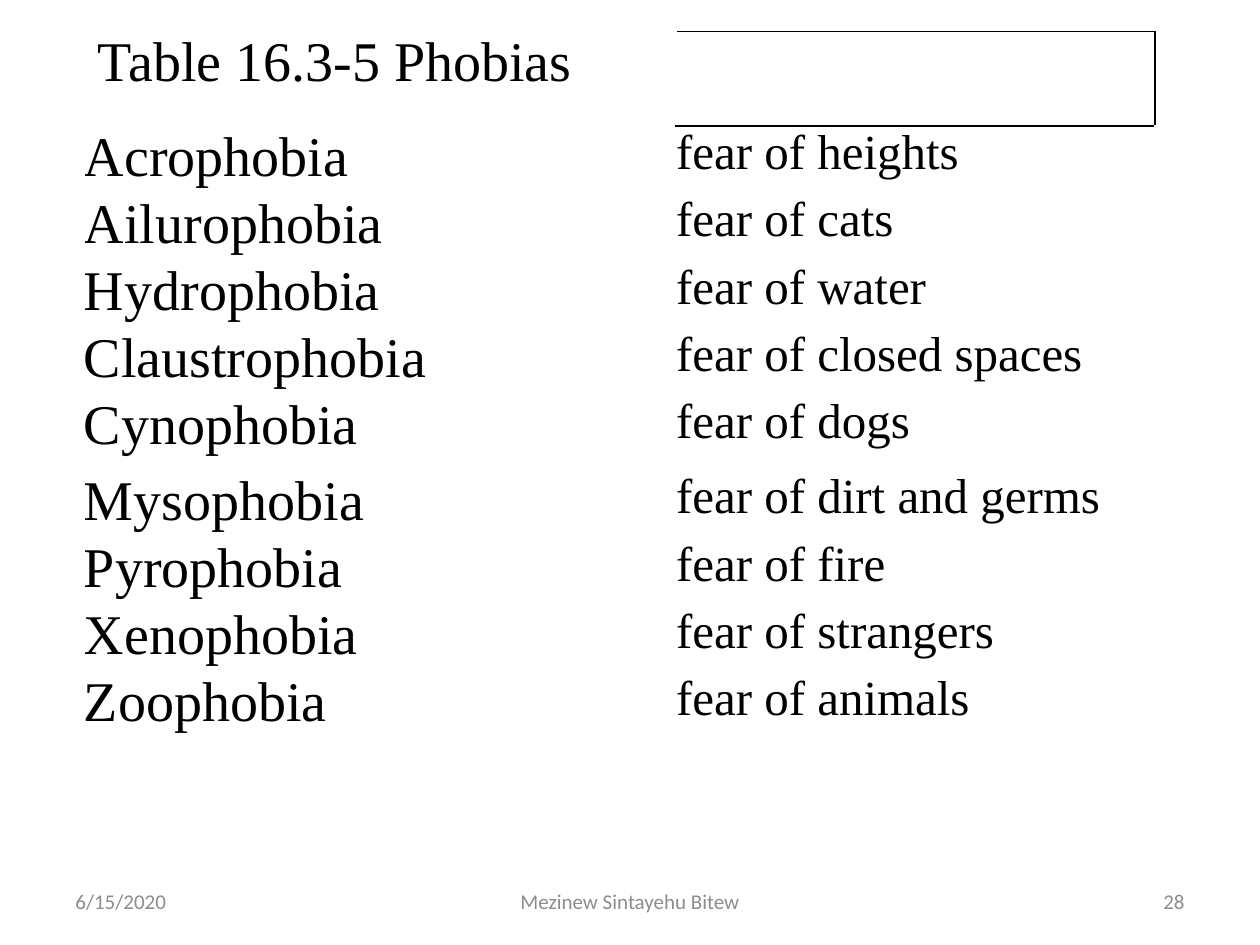
"""Build a slide with a table of phobias and a footer line."""
from typing import NamedTuple

from lxml.etree import SubElement
from pptx import Presentation as Deck
from pptx.dml.color import RGBColor as Color
from pptx.enum.text import MSO_ANCHOR as Anchor, PP_ALIGN as Align
from pptx.oxml.ns import qn
from pptx.util import Pt

BLACK = "000000"
GREY = "8C8C8C"
SERIF = "Times New Roman"
SANS = "Calibri"


class Fear(NamedTuple):
    name: str
    gloss: str
    high: float = 38.4


class Note(NamedTuple):
    text: str
    left: float
    width: float
    align: Align


TITLE = "Table 16.3-5 Phobias"
FEARS = [
    Fear("Acrophobia", "fear of heights"),
    Fear("Ailurophobia", "fear of cats"),
    Fear("Hydrophobia", "fear of water"),
    Fear("Claustrophobia", "fear of closed spaces"),
    Fear("Cynophobia", "fear of dogs", 43.2),
    Fear("Mysophobia", "fear of dirt and germs"),
    Fear("Pyrophobia", "fear of fire"),
    Fear("Xenophobia", "fear of strangers"),
    Fear("Zoophobia", "fear of animals"),
]
NOTES = [
    Note("6/15/2020", 36, 168, Align.LEFT),
    Note("Mezinew Sintayehu Bitew", 246, 228, Align.CENTER),
    Note("28", 516, 168, Align.RIGHT),
]


def tint(code: str) -> Color:
    return Color.from_string(code)


def write(frame, text: str, size: float, face: str, code: str) -> None:
    para = frame.paragraphs[0]
    para.text = text
    para.font.size = Pt(size)
    para.font.name = face
    para.font.color.rgb = tint(code)


def rule(cell, sides: str) -> None:
    props = cell._tc.get_or_add_tcPr()
    for spot, side in enumerate(sides):
        line = SubElement(props, qn(f"a:ln{side}"), w=str(Pt(1)))
        fill = SubElement(line, qn("a:solidFill"))
        SubElement(fill, qn("a:srgbClr"), val=BLACK)
        props.insert(spot, line)


def fill_cell(cell, text: str, size: float, left: float = 0) -> None:
    cell.margin_left = Pt(left)
    cell.margin_right = cell.margin_top = cell.margin_bottom = 0
    cell.fill.background()
    write(cell.text_frame, text, size, SERIF, BLACK)


def draw_table(slide) -> None:
    highs = [54, *(fear.high for fear in FEARS)]
    grid = slide.shapes.add_table(
        len(highs), 2, Pt(48), Pt(18), Pt(612), Pt(sum(highs))).table
    grid.first_row = grid.horz_banding = False
    for col, width in zip(grid.columns, (338.4, 273.6)):
        col.width = Pt(width)
    for row, high in zip(grid.rows, highs):
        row.height = Pt(high)
    fill_cell(grid.cell(0, 0), TITLE, 32, left=8)
    fill_cell(grid.cell(0, 1), "", 28)
    for num, fear in enumerate(FEARS, 1):
        fill_cell(grid.cell(num, 0), fear.name, 32)
        fill_cell(grid.cell(num, 1), fear.gloss, 28)
    rule(grid.cell(0, 1), "RTB")
    rule(grid.cell(1, 1), "T")


def draw_note(slide, note: Note) -> None:
    frame = slide.shapes.add_textbox(
        Pt(note.left), Pt(500.4), Pt(note.width), Pt(28.8)).text_frame
    frame.word_wrap = True
    frame.vertical_anchor = Anchor.MIDDLE
    write(frame, note.text, 12, SANS, GREY)
    frame.paragraphs[0].alignment = note.align


def main() -> None:
    deck = Deck()
    deck.slide_width, deck.slide_height = Pt(720), Pt(540)
    slide = deck.slides.add_slide(deck.slide_layouts[6])
    draw_table(slide)
    for note in NOTES:
        draw_note(slide, note)
    deck.save("out.pptx")


if __name__ == "__main__":
    main()
